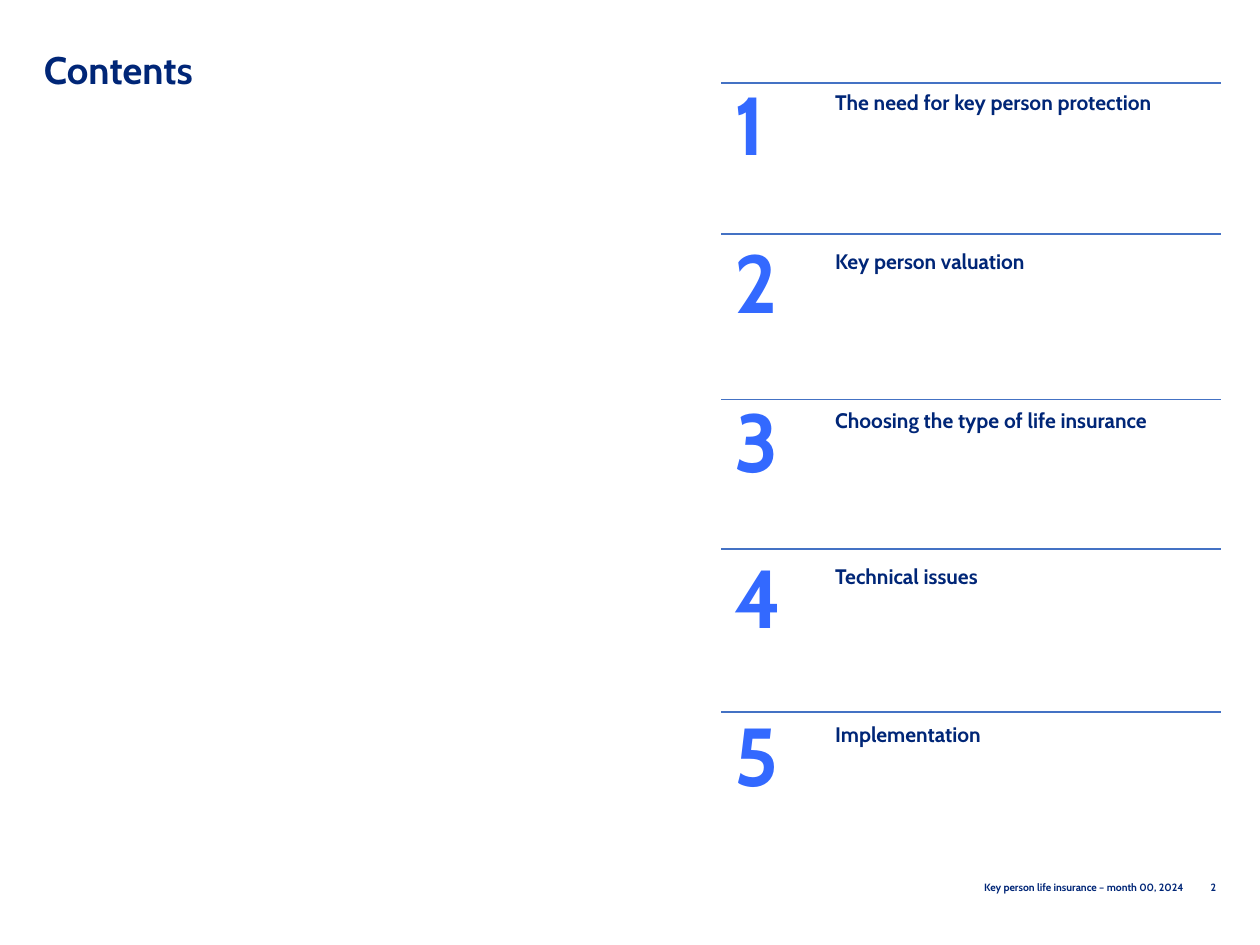
from lxml.etree import SubElement
from pptx import Presentation
from pptx.dml.color import RGBColor
from pptx.enum.shapes import MSO_CONNECTOR
from pptx.enum.text import MSO_ANCHOR, PP_ALIGN
from pptx.oxml.ns import qn
from pptx.util import Inches, Pt

NAVY = RGBColor(0x00, 0x26, 0x77)
BLUE = RGBColor(0x33, 0x69, 0xFF)
RULE = RGBColor(0x44, 0x72, 0xC4)

TITLE = {"size": Pt(21.9), "color": NAVY, "line_spacing": 0.9}
NUMBER = {"size": Pt(46.9), "color": BLUE, "line_spacing": 0.9}
HEADING = {"size": Pt(12), "color": NAVY, "line_spacing": Pt(7.5)}
FOOTER = {"size": Pt(6), "color": NAVY, "alignment": PP_ALIGN.RIGHT}

prs = Presentation()
prs.slide_width, prs.slide_height = Inches(10), Inches(7.5)
s = prs.slides.add_slide(prs.slide_layouts[6])


def add_text(text, left, top, width, height, fmt, anchor=MSO_ANCHOR.TOP):
    sp = s.shapes.add_textbox(*map(Inches, (left, top, width, height)))
    tf = sp.text_frame
    tf.word_wrap = True
    tf.vertical_anchor = anchor
    p = tf.paragraphs[0]
    r = p.add_run()
    r.text = text
    r.font.name, r.font.bold = "Cabin", True
    for name, value in fmt.items():
        if name == "color":
            r.font.color.rgb = value
        else:
            setattr(r.font if name == "size" else p, name, value)


# Title
add_text("Contents", 0.25, 0.36, 3.81, 0.52, TITLE)

# Contents entries: heading, heading width, top of number, rule height
entries = [
    ("The need for key person protection", 3.27, 0.6, 0.66),
    ("Key person valuation", 2.66, 1.86, 1.86),
    ("Choosing the type of life insurance", 2.95, 3.12, 3.17),
    ("Technical issues", 2.66, 4.36, 4.36),
    ("Implementation", 2.66, 5.61, 5.65),
]
for number, (heading, width, top, rule_y) in enumerate(entries, 1):
    add_text(heading, 6.53, top + 0.16, width, 0.6, HEADING)
    add_text(str(number), 5.73, top, 0.91, 0.84, NUMBER, MSO_ANCHOR.MIDDLE)
    rule = s.shapes.add_connector(
        MSO_CONNECTOR.STRAIGHT,
        Inches(9.69), Inches(rule_y), Inches(5.72), Inches(rule_y))
    rule.line.color.rgb = RULE
    rule.line.width = Pt(1)
    SubElement(rule._element.spPr, qn("a:effectLst"))

# Footer and page number
add_text("Key person life insurance – month 00, 2024",
         6.11, 6.94, 3.38, 0.2, FOOTER, MSO_ANCHOR.MIDDLE)
add_text("2", 9.5, 6.94, 0.25, 0.16, FOOTER)

prs.save("out.pptx")
